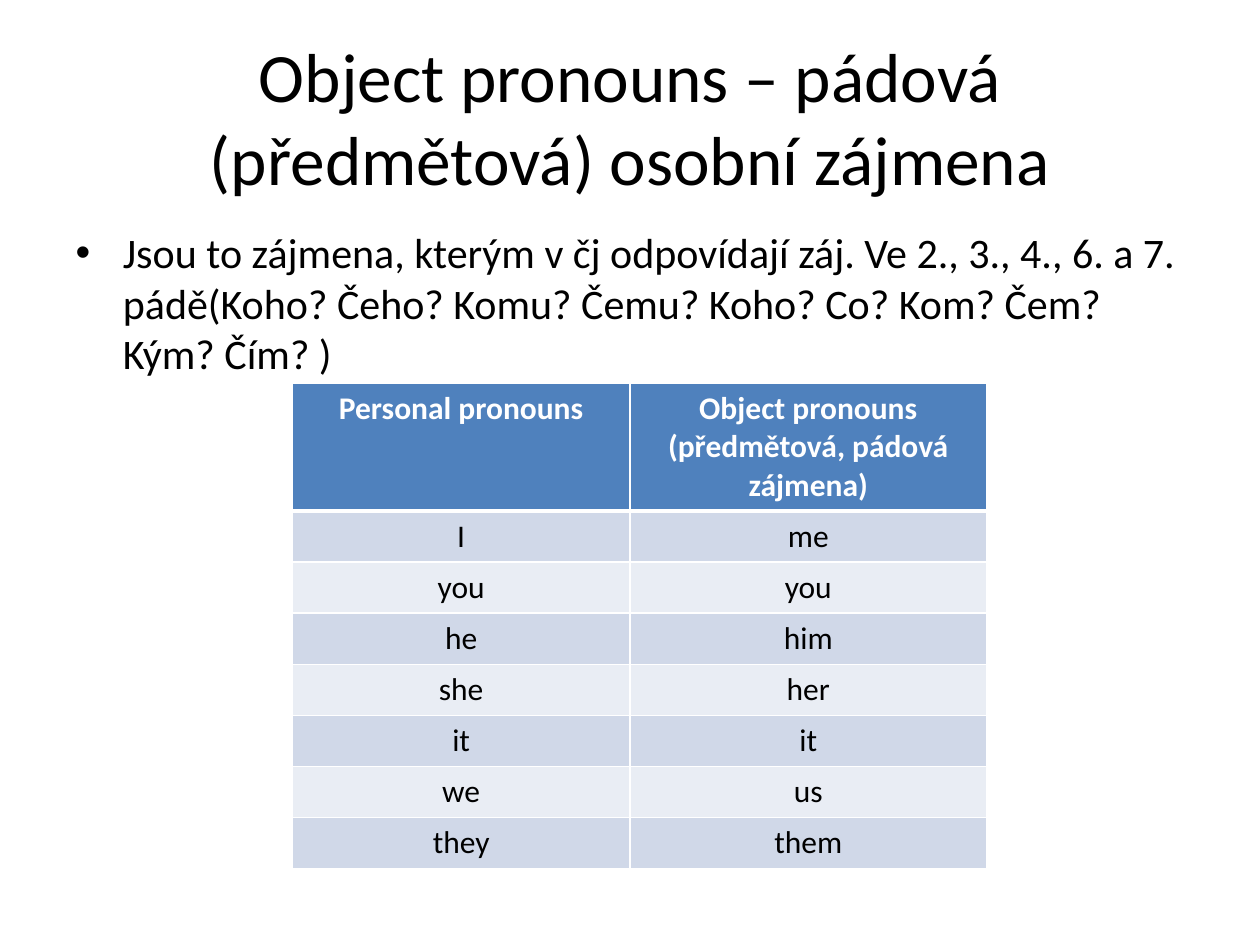
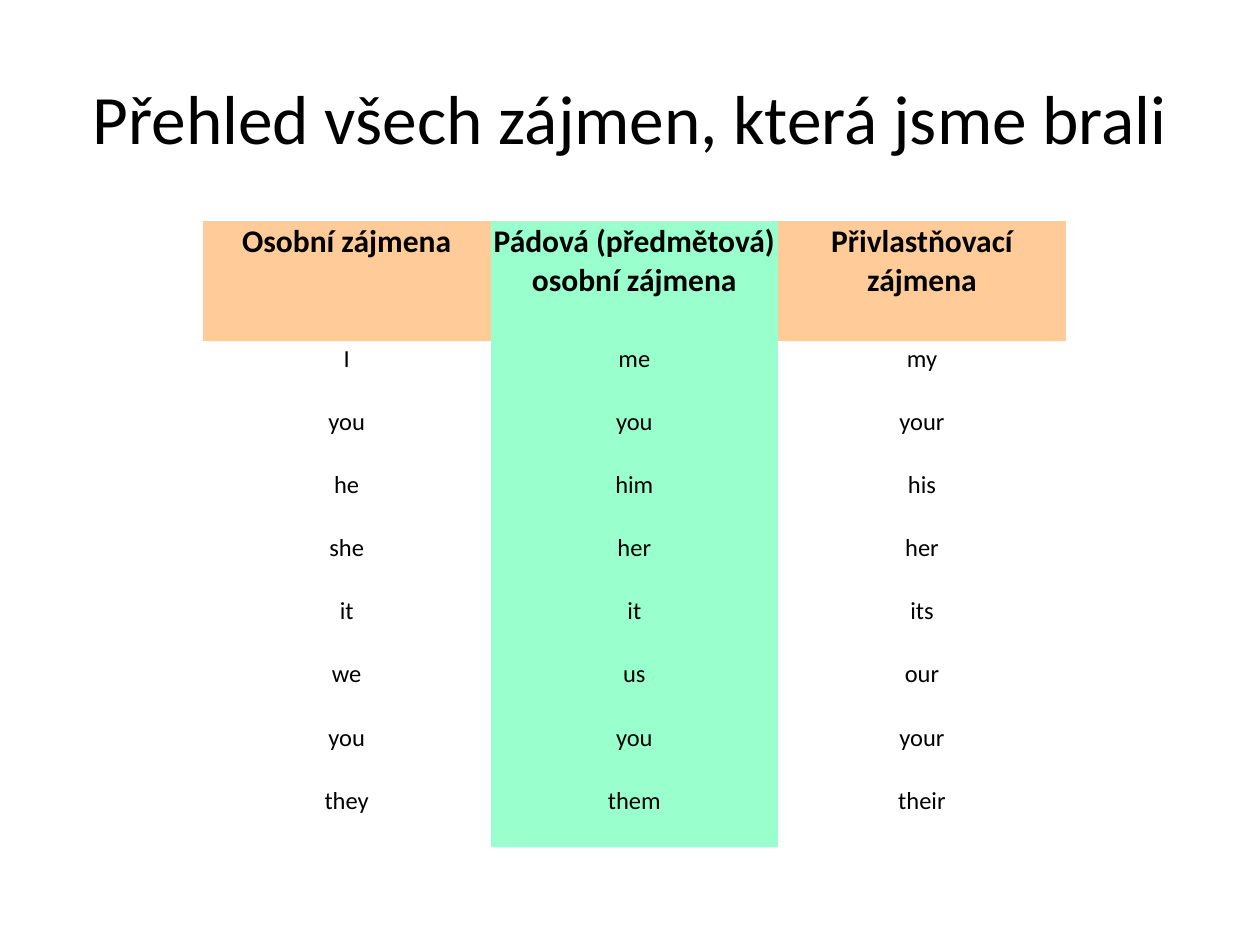
from lxml import etree
from pptx import Presentation
from pptx.dml.color import RGBColor
from pptx.enum.text import MSO_ANCHOR, MSO_AUTO_SIZE, PP_ALIGN
from pptx.oxml.ns import qn
from pptx.util import Inches, Pt

CENTER, LEFT = PP_ALIGN.CENTER, PP_ALIGN.LEFT
MIDDLE, TOP = MSO_ANCHOR.MIDDLE, MSO_ANCHOR.TOP
NO_FIT = MSO_AUTO_SIZE.NONE

FONT = "Calibri"
BLACK, WHITE = "000000", "FFFFFF"
BLUE, DARK, PALE = "4F81BD", "D0D8E8", "E9EDF4"
PEACH, MINT = "FFCC99", "99FFCC"

CASES_TITLE = "Object pronouns – pádová (předmětová) osobní zájmena"
CASES_NOTE = ("Jsou to zájmena, kterým v čj odpovídají záj. Ve 2., 3., 4., 6. a 7. "
              "pádě(Koho? Čeho? Komu? Čemu? Koho? Co? Kom? Čem? Kým? Čím? )")
CASES = [
    ("Personal pronouns", "Object pronouns\n(předmětová, pádová zájmena)"),
    ("I", "me"),
    ("you", "you"),
    ("he", "him"),
    ("she", "her"),
    ("it", "it"),
    ("we", "us"),
    ("they", "them"),
]

REVIEW_TITLE = "Přehled všech zájmen, která jsme brali"
REVIEW = [
    ("Osobní zájmena", "Pádová (předmětová) osobní zájmena", "Přivlastňovací zájmena"),
    ("I", "me", "my"),
    ("you", "you", "your"),
    ("he", "him", "his"),
    ("she", "her", "her"),
    ("it", "it", "its"),
    ("we", "us", "our"),
    ("you", "you", "your"),
    ("they", "them", "their"),
]

TITLE_BOX = (0.5, 0.3, 9, 1.25)
BODY_BOX = (0.5, 1.75, 9, 4.95)


def paint(text):
    return RGBColor.from_string(text)


def write(frame, text, size, color=BLACK, bold=False, align=CENTER):
    """Put each line of text in its own paragraph, as one styled run."""
    for i, line in enumerate(text.split("\n")):
        para = frame.add_paragraph() if i else frame.paragraphs[0]
        para.alignment = align
        run = para.add_run()
        run.text = line
        font = run.font
        font.name, font.size, font.bold = FONT, Pt(size), bold
        font.color.rgb = paint(color)


def fill_box(shape, box, text, size, align, anchor):
    """Move a placeholder to its box and write in it."""
    shape.left, shape.top, shape.width, shape.height = map(Inches, box)
    frame = shape.text_frame
    frame.auto_size, frame.vertical_anchor = NO_FIT, anchor
    write(frame, text, size, align=align)


def add_page(deck, layout, title):
    slide = deck.slides.add_slide(deck.slide_layouts[layout])
    fill_box(slide.shapes.title, TITLE_BOX, title, 39.6, CENTER, MIDDLE)
    return slide


def edge(cell, widths):
    """Set white left, right, top and bottom borders; 0 means none."""
    props = cell._tc.get_or_add_tcPr()
    for i, (side, width) in enumerate(zip("LRTB", widths)):
        line = etree.Element(qn(f"a:ln{side}"), w=str(Pt(width)))
        if width:
            solid = etree.SubElement(line, qn("a:solidFill"))
            etree.SubElement(solid, qn("a:srgbClr"), val=WHITE)
        else:
            etree.SubElement(line, qn("a:noFill"))
        props.insert(i, line)


def add_grid(slide, data, box, cols, head, look):
    """Draw a table; look(row, col) gives fill, font, borders and inset."""
    x, y, w, h = box
    frame = slide.shapes.add_table(len(data), len(cols), *map(Inches, box))
    table = frame.table
    table.first_row = table.horz_banding = False
    for col, share in zip(table.columns, cols):
        col.width = Inches(w * share / sum(cols))
    for r, row in enumerate(data):
        table.rows[r].height = Inches((h - head) / (len(data) - 1) if r else head)
        for c, text in enumerate(row):
            cell = table.cell(r, c)
            fill, size, color, lines, inset = look(r, c)
            cell.fill.solid()
            cell.fill.fore_color.rgb = paint(fill)
            edge(cell, lines)
            if inset:
                cell.margin_left = cell.margin_right = Inches(inset)
                cell.margin_top = cell.margin_bottom = Inches(inset)
            write(cell.text_frame, text, size, color, bold=r == 0)


def case_look(r, c):
    if r == 0:
        return BLUE, 18, WHITE, (1, 1, 1, 3), None
    return (DARK if r % 2 else PALE), 18, BLACK, (1, 1, 3 if r == 1 else 1, 1), None


def review_look(r, c):
    fill = MINT if c == 1 else WHITE if r else PEACH
    return fill, 14 if r else 18, BLACK, (0, 0, 0, 0), 0.02


def main():
    deck = Presentation()
    deck.slide_width, deck.slide_height = Inches(10), Inches(7.5)

    page = add_page(deck, 1, CASES_TITLE)
    fill_box(page.placeholders[1], BODY_BOX, CASES_NOTE, 24, LEFT, TOP)
    add_grid(page, CASES, (2.32, 3.04, 5.51, 3.84), (2.68, 2.83), 1, case_look)

    page = add_page(deck, 5, REVIEW_TITLE)
    add_grid(page, REVIEW, (1.61, 1.75, 6.85, 4.97), (1, 1, 1), 0.96, review_look)

    deck.save("out.pptx")


if __name__ == "__main__":
    main()
